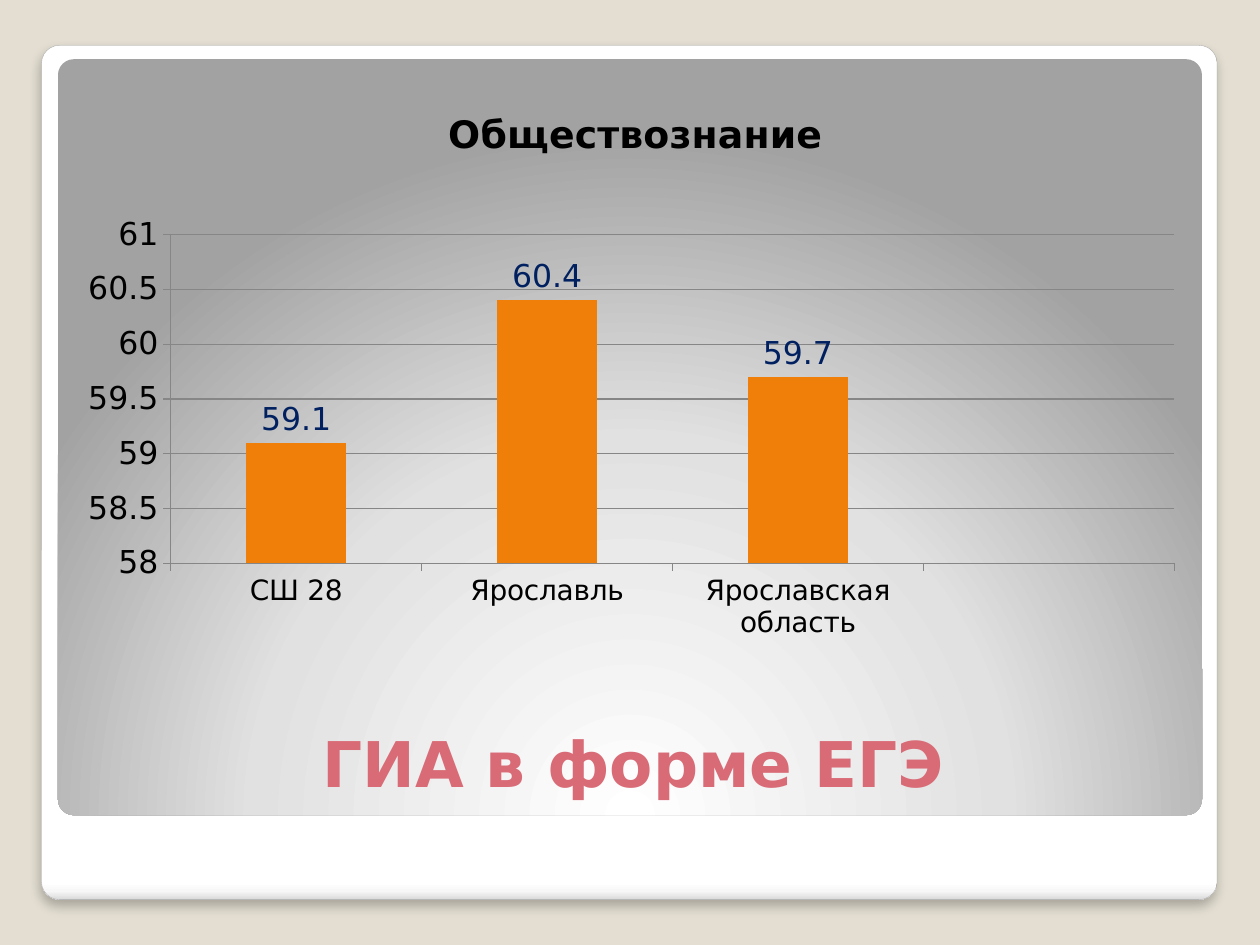
from lxml import etree
from pptx import Presentation
from pptx.chart.data import CategoryChartData
from pptx.dml.color import RGBColor
from pptx.enum.chart import XL_CHART_TYPE, XL_LABEL_POSITION, XL_TICK_MARK
from pptx.enum.shapes import MSO_SHAPE
from pptx.enum.text import MSO_ANCHOR, PP_ALIGN
from pptx.oxml.ns import qn
from pptx.util import Inches, Pt

COLUMNS = XL_CHART_TYPE.COLUMN_CLUSTERED
LABEL_ABOVE = XL_LABEL_POSITION.OUTSIDE_END
TICK_OUTSIDE = XL_TICK_MARK.OUTSIDE
ROUNDED = MSO_SHAPE.ROUNDED_RECTANGLE
BOTTOM = MSO_ANCHOR.BOTTOM
CENTER = PP_ALIGN.CENTER

COLORS = {
    "background": "E3DED1",
    "frame_line": "A4A4A4",
    "heading": "D96B77",
    "text": "000000",
    "bar": "F07F09",
    "value": "002060",
    "grid": "868686",
}
FRAME_STOPS = [(0, "FFFFFF"), (98, "FFFFFF"), (99, "F7F7F7"), (100, "DADADA")]
PANEL_STOPS = [(0, "FFFFFF"), (55, "E1E1E1"), (100, "A2A2A2")]
PANEL_FOCUS = {"l": 50, "t": 175, "r": 50, "b": -75}


def add_node(parent, tag, **attributes):
    return etree.SubElement(parent, qn(tag), {k: str(v) for k, v in attributes.items()})


class SlideBuilder:
    font = "DejaVu Sans"

    def __init__(self, slide):
        self.slide = slide

    def color(self, name):
        return RGBColor.from_string(COLORS[name])

    def style_font(self, font, size, color, bold=False):
        font.name = self.font
        font.size = Pt(size)
        font.bold = bold
        font.color.rgb = self.color(color)

    def background(self):
        fill = self.slide.background.fill
        fill.solid()
        fill.fore_color.rgb = self.color("background")

    def panel(self, box, stops, focus=None):
        panel = self.slide.shapes.add_shape(ROUNDED, *map(Inches, box))
        panel.adjustments[0] = 0.021
        panel.shadow.inherit = False
        panel.line.fill.background()
        panel.fill.gradient()
        gradient = panel.element.spPr.find(qn("a:gradFill"))
        for child in list(gradient):
            gradient.remove(child)
        stop_list = add_node(gradient, "a:gsLst")
        for position, color in stops:
            stop = add_node(stop_list, "a:gs", pos=position * 1000)
            add_node(stop, "a:srgbClr", val=color)
        if focus:
            circle = add_node(gradient, "a:path", path="circle")
            add_node(circle, "a:fillToRect", **{k: v * 1000 for k, v in focus.items()})
        else:
            add_node(gradient, "a:lin", ang=5400000, scaled=0)
        return panel

    def framed_panel(self, box, stops):
        frame = self.panel(box, stops)
        frame.line.color.rgb = self.color("frame_line")
        frame.line.width = Pt(0.16)
        effects = frame.element.spPr.find(qn("a:effectLst"))
        shadow = add_node(effects, "a:outerShdw", blurRad=Pt(6), dist=Pt(4),
                          dir=5400000, algn="t", rotWithShape=0)
        shade = add_node(shadow, "a:srgbClr", val="000000")
        add_node(shade, "a:alpha", val=25000)

    def heading(self, box, text):
        frame = self.slide.shapes.add_textbox(*map(Inches, box)).text_frame
        frame.word_wrap = True
        frame.vertical_anchor = BOTTOM
        paragraph = frame.paragraphs[0]
        paragraph.alignment = CENTER
        run = paragraph.add_run()
        run.text = text
        self.style_font(run.font, 36, "heading", bold=True)

    def place(self, owner, **fractions):
        layout = owner.find(qn("c:layout"))
        if layout is None:
            layout = etree.Element(qn("c:layout"))
            text = owner.find(qn("c:tx"))
            owner.insert(0 if text is None else 1, layout)
        manual = add_node(layout, "c:manualLayout")
        if "w" in fractions:
            add_node(manual, "c:layoutTarget", val="inner")
        for side in ("x", "y"):
            add_node(manual, f"c:{side}Mode", val="edge")
        for side, value in fractions.items():
            add_node(manual, f"c:{side}", val=value)

    def style_axis(self, axis, size):
        self.style_font(axis.tick_labels.font, size, "text")
        axis.major_tick_mark = TICK_OUTSIDE
        axis.format.line.color.rgb = self.color("grid")
        axis.format.line.width = Pt(0.75)

    def column_chart(self, box, title, scores):
        data = CategoryChartData()
        data.categories = list(scores) + [""]
        data.add_series("Series 1", list(scores.values()) + [None])
        chart = self.slide.shapes.add_chart(COLUMNS, *map(Inches, box), data).chart
        self.style_font(chart.font, 18, "text")
        chart.has_legend = False

        chart.has_title = True
        title_run = chart.chart_title.text_frame.paragraphs[0].add_run()
        title_run.text = title
        self.style_font(title_run.font, 21.6, "text", bold=True)
        chart.chart_title.include_in_layout = False
        self.place(chart.chart_title._element, x=0.33, y=0.05)

        plot = chart.plots[0]
        plot.vary_by_categories = False
        plot.gap_width = 150
        self.place(plot._element.getparent(), x=0.09, y=0.28, w=0.89, h=0.57)

        series = plot.series[0]
        series.format.fill.solid()
        series.format.fill.fore_color.rgb = self.color("bar")
        labels = series.data_labels
        labels.show_value = True
        labels.position = LABEL_ABOVE
        self.style_font(labels.font, 18, "value")

        self.style_axis(chart.category_axis, 16)
        value_axis = chart.value_axis
        self.style_axis(value_axis, 18)
        value_axis.minimum_scale, value_axis.maximum_scale = 58, 61
        value_axis.major_unit = 0.5
        value_axis.has_major_gridlines = True
        grid = value_axis.major_gridlines.format.line
        grid.color.rgb = self.color("grid")
        grid.width = Pt(0.75)


def main():
    deck = Presentation()
    deck.slide_width, deck.slide_height = Inches(10), Inches(7.5)
    builder = SlideBuilder(deck.slides.add_slide(deck.slide_layouts[6]))
    builder.background()
    builder.framed_panel((0.33, 0.36, 9.33, 6.78), FRAME_STOPS)
    builder.panel((0.46, 0.47, 9.08, 6), PANEL_STOPS, PANEL_FOCUS)
    builder.heading((0.55, 5.23, 8.95, 1.17), "ГИА в форме ЕГЭ")
    scores = {"СШ 28": 59.1, "Ярославль": 60.4, "Ярославская область": 59.7}
    builder.column_chart((0.55, 0.58, 8.95, 4.58), "Обществознание", scores)
    deck.save("out.pptx")


if __name__ == "__main__":
    main()
